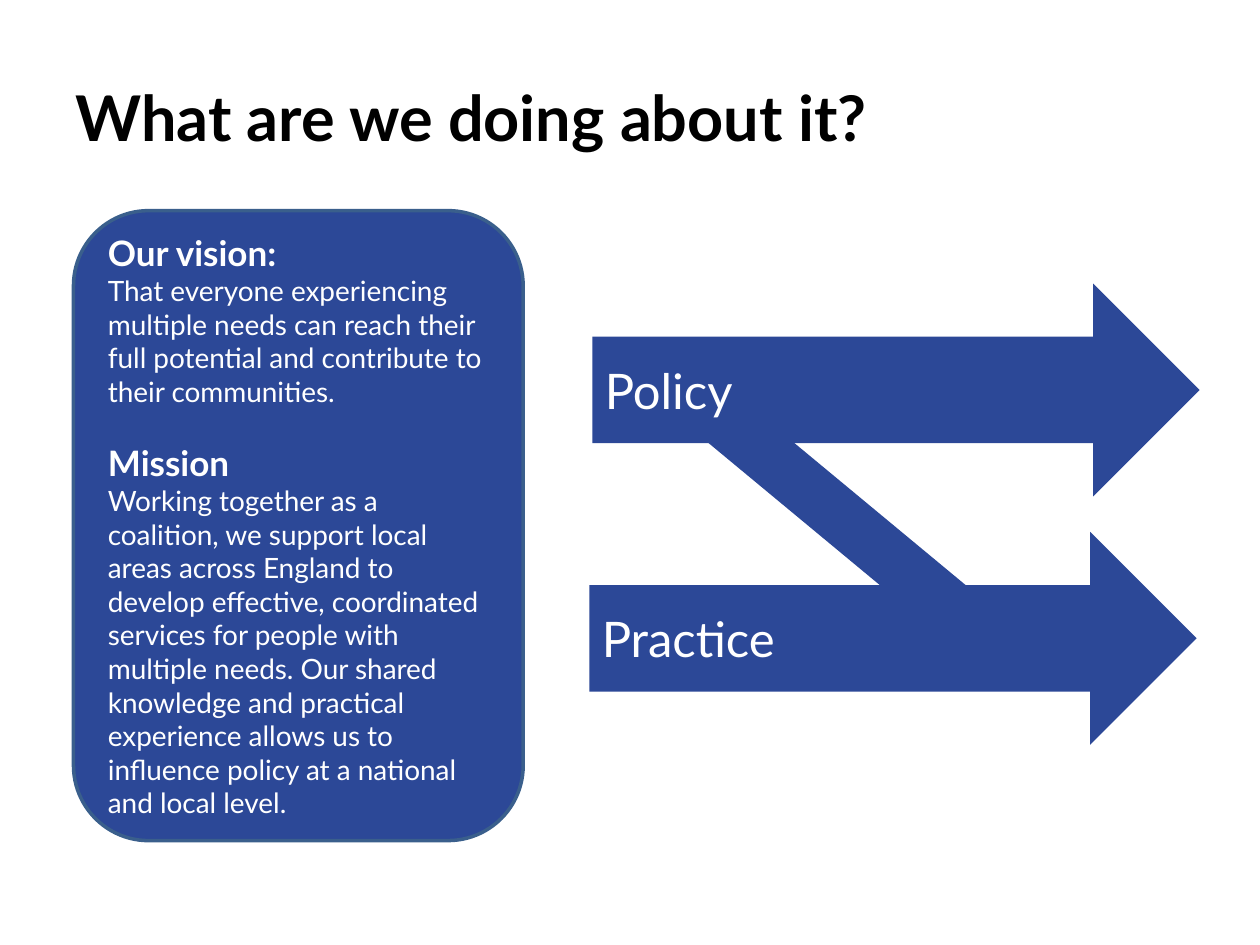
from pptx import Presentation
from pptx.dml.color import RGBColor
from pptx.enum import shapes, text
from pptx.util import Pt

FONT, BLUE, WHITE = "Lato", "2C4897", "FFFFFF"
STATEMENTS = [
    ("Our vision:",
     "That everyone experiencing multiple needs can reach their full potential "
     "and contribute to their communities."),
    ("Mission",
     "Working together as a coalition, we support local areas across England to "
     "develop effective, coordinated services for people with multiple needs. "
     "Our shared knowledge and practical experience allows us to influence policy "
     "at a national and local level."),
]


def rgb(value):
    return RGBColor.from_string(value)


def style(p, size, color, bold=False):
    p.alignment = text.PP_ALIGN.LEFT
    for r in p.runs:
        r.font.name, r.font.size, r.font.bold = FONT, Pt(size), bold
        r.font.color.rgb = rgb(color)


def add_shape(s, kind, box):
    sp = s.shapes.add_shape(kind, *map(Pt, box))
    sp.shadow.inherit = False
    sp.fill.solid()
    sp.fill.fore_color.rgb = rgb(BLUE)
    sp.line.fill.background()
    sp.text_frame.vertical_anchor = text.MSO_ANCHOR.MIDDLE
    return sp


def add_title(s, box, wording):
    tf = s.shapes.add_textbox(*map(Pt, box)).text_frame
    tf.word_wrap = True
    tf.vertical_anchor = text.MSO_ANCHOR.MIDDLE
    tf.text = wording
    style(tf.paragraphs[0], 36, "000000", True)


def add_statements(s, box):
    sp = add_shape(s, shapes.MSO_SHAPE.ROUNDED_RECTANGLE, box)
    sp.adjustments[0] = 0.167
    sp.line.color.rgb = rgb("3A5F8C")
    sp.line.width = Pt(2)
    tf = sp.text_frame
    tf.text = "\n".join(line for pair in STATEMENTS for line in pair)
    for i, p in enumerate(tf.paragraphs):
        heading = i % 2 == 0
        style(p, 20 if heading else 16, WHITE, heading)
        if heading and i:
            p.space_before = Pt(19.2)


def add_strands(s, box):
    left, top, width, height = box
    # Two arrows, the lower one set slightly to the left
    arrow_h = 121.7
    strands = [("Policy", left + 1.7, top), ("Practice", left, top + height - arrow_h)]
    for label, x, y in strands:
        sp = add_shape(s, shapes.MSO_SHAPE.RIGHT_ARROW, (x, y, width - 1.7, arrow_h))
        sp.text_frame.text = label
        style(sp.text_frame.paragraphs[0], 28, WHITE)
    # Diagonal band joining the arrows
    band = add_shape(s, shapes.MSO_SHAPE.DIAGONAL_STRIPE,
                     (left + 52, top + 77.8, 185, 153.4))
    band.adjustments[0] = 0.735
    band.element.spPr.get_or_add_xfrm().set("flipH", "1")


def main():
    prs = Presentation()
    prs.slide_width, prs.slide_height = Pt(720), Pt(540)
    s = prs.slides.add_slide(prs.slide_layouts[6])
    add_title(s, (36, 21.6, 648, 90), "What are we doing about it?")
    add_statements(s, (42, 120.4, 257, 360))
    add_strands(s, (336.8, 162, 348.7, 263.6))
    prs.save("out.pptx")


if __name__ == "__main__":
    main()
